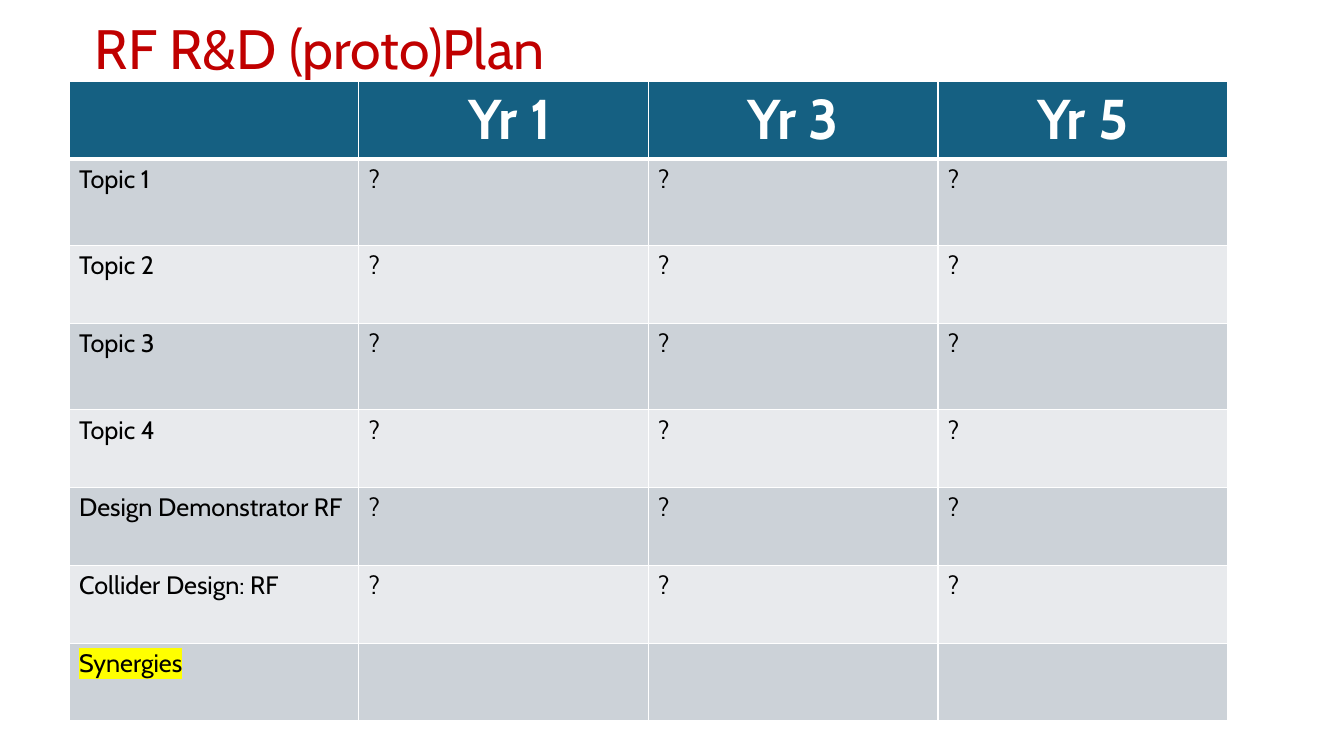
"""Build the RF R&D plan slide: a title above a table of topics by year."""
from dataclasses import dataclass

from lxml import etree
from pptx import Presentation
from pptx import util as u
from pptx.dml.color import RGBColor
from pptx.enum import text
from pptx.oxml.ns import qn


@dataclass(frozen=True)
class Theme:
    font: str = "Cabin"
    title: str = "C00000"
    header: str = "156082"
    bands: tuple[str, str] = ("CCD2D8", "E8EAED")
    light: str = "FFFFFF"
    dark: str = "000000"
    marker: str = "FFFF00"
    title_size: float = 39.6
    header_size: float = 40
    body_size: float = 18
    thin_line: float = 1
    thick_line: float = 3


@dataclass(frozen=True)
class Style:
    size: float
    color: str
    bold: bool = False
    highlight: str = ""


@dataclass(frozen=True)
class Topic:
    name: str
    years: tuple[str, str, str] = ("?", "?", "?")
    height: float = 1.96
    highlight: str = ""


THEME = Theme()
HEADINGS = ("", " Yr 1", "Yr 3", "Yr 5")
HEADER_HEIGHT = 1.96
COLUMN_WIDTH = 7.3
TOPICS = (
    Topic("Topic 1", height=2.18),
    Topic("Topic 2"),
    Topic("Topic 3", height=2.18),
    Topic("Topic 4"),
    Topic("Design Demonstrator RF"),
    Topic("Collider Design: RF"),
    Topic("Synergies", ("", "", ""), highlight=THEME.marker),
)


def add_color(parent, tag: str, color: str):
    holder = etree.SubElement(parent, qn(tag))
    etree.SubElement(holder, qn("a:srgbClr"), val=color)


def add_span(para, words: str, style: Style):
    span = para.add_run()
    span.text = words
    span.font.size = u.Pt(style.size)
    span.font.bold = style.bold
    span.font.color.rgb = RGBColor.from_string(style.color)
    if style.highlight:
        add_color(span.font._element, "a:highlight", style.highlight)
    span.font.name = THEME.font


def paint_cell(cell, fill: str, bottom_line: float):
    properties = cell._tc.get_or_add_tcPr()
    for side in "LRTB":
        width = bottom_line if side == "B" else THEME.thin_line
        line = etree.SubElement(properties, qn(f"a:ln{side}"), w=str(u.Pt(width)))
        add_color(line, "a:solidFill", THEME.light)
    cell.fill.solid()
    cell.fill.fore_color.rgb = RGBColor.from_string(fill)


def add_title(page):
    box = page.shapes.title
    box.left, box.top, box.width, box.height = map(u.Cm, (2.13, 0.38, 29.21, 1.85))
    frame = box.text_frame
    frame.auto_size = text.MSO_AUTO_SIZE.NONE
    frame.vertical_anchor = text.MSO_ANCHOR.MIDDLE
    para = frame.paragraphs[0]
    para.alignment = text.PP_ALIGN.LEFT
    para.line_spacing = 0.9
    add_span(para, "RF R&D (proto)Plan", Style(THEME.title_size, THEME.title))


def add_plan(page):
    heights = [HEADER_HEIGHT] + [topic.height for topic in TOPICS]
    columns = len(HEADINGS)
    table = page.shapes.add_table(
        len(heights), columns, u.Cm(1.74), u.Cm(2.04),
        u.Cm(COLUMN_WIDTH * columns), u.Cm(sum(heights)),
    ).table
    for column in table.columns:
        column.width = u.Cm(COLUMN_WIDTH)
    for row, height in zip(table.rows, heights):
        row.height = u.Cm(height)

    heading_style = Style(THEME.header_size, THEME.light, bold=True)
    for column, heading in enumerate(HEADINGS):
        cell = table.cell(0, column)
        paint_cell(cell, THEME.header, THEME.thick_line)
        cell.vertical_anchor = text.MSO_ANCHOR.MIDDLE
        if heading:
            para = cell.text_frame.paragraphs[0]
            para.alignment = text.PP_ALIGN.CENTER
            add_span(para, heading, heading_style)

    for row, topic in enumerate(TOPICS, start=1):
        style = Style(THEME.body_size, THEME.dark, highlight=topic.highlight)
        for column, words in enumerate((topic.name, *topic.years)):
            cell = table.cell(row, column)
            paint_cell(cell, THEME.bands[(row - 1) % 2], THEME.thin_line)
            if words:
                add_span(cell.text_frame.paragraphs[0], words, style)


def main():
    deck = Presentation()
    deck.slide_width, deck.slide_height = u.Cm(33.87), u.Cm(19.05)
    page = deck.slides.add_slide(deck.slide_layouts[5])
    add_title(page)
    add_plan(page)
    deck.save("out.pptx")


if __name__ == "__main__":
    main()
